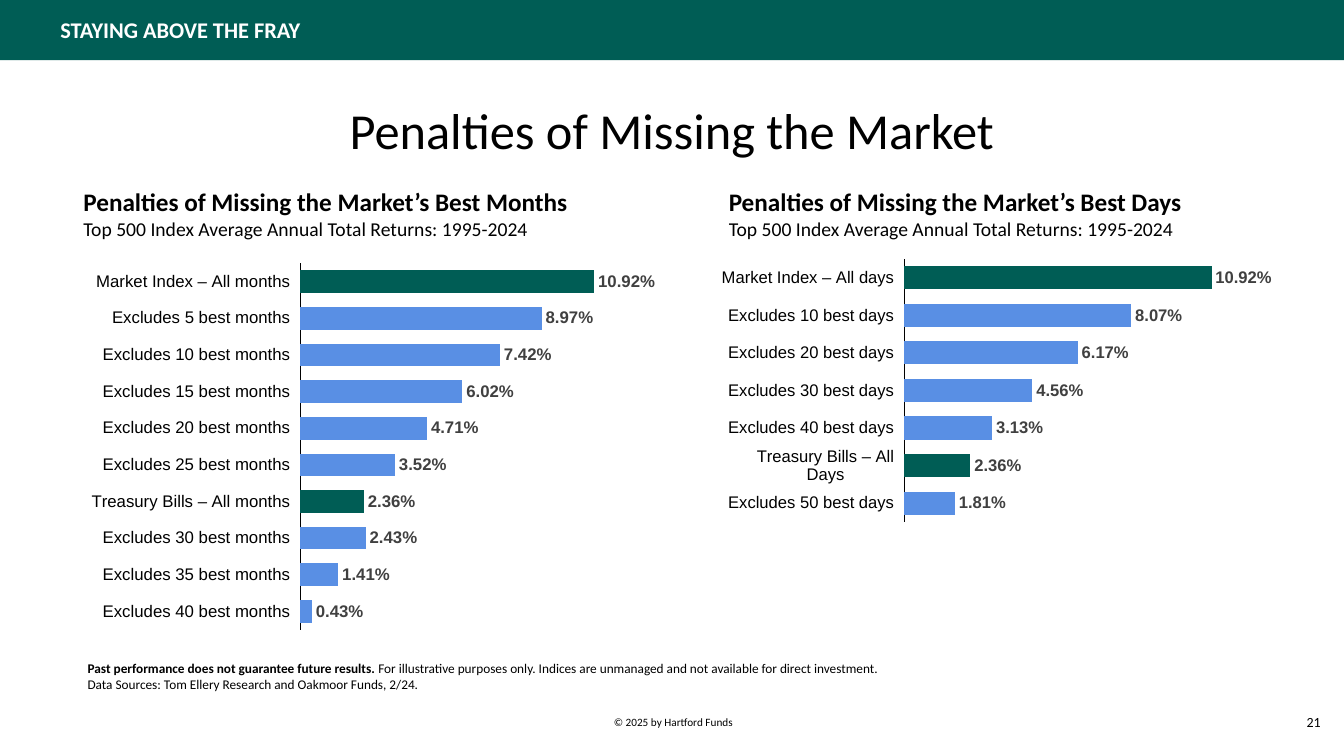
"""Build the slide on the returns lost by missing the market's best months and days."""
import lxml.etree
import pptx
import pptx.chart.data
import pptx.dml.color
import pptx.enum.chart
import pptx.enum.shapes
import pptx.enum.text
import pptx.oxml.ns
import pptx.util

Pt = pptx.util.Pt
ALIGN = pptx.enum.text.PP_ALIGN
ANCHOR = pptx.enum.text.MSO_ANCHOR
AUTO_SIZE = pptx.enum.text.MSO_AUTO_SIZE

COLORS = {
    "green": "005D55",
    "blue": "598FE4",
    "black": "000000",
    "white": "FFFFFF",
    "label": "404040",
}

MONTH_RETURNS = {
    "Excludes 40 best months": 0.0043,
    "Excludes 35 best months": 0.0141,
    "Excludes 30 best months": 0.0243,
    "Treasury Bills – All months": 0.0236,
    "Excludes 25 best months": 0.0352,
    "Excludes 20 best months": 0.0471,
    "Excludes 15 best months": 0.0602,
    "Excludes 10 best months": 0.0742,
    "Excludes 5 best months": 0.0897,
    "Market Index – All months": 0.1092,
}
DAY_RETURNS = {
    "Excludes 50 best days": 0.0181,
    "Treasury Bills – All Days": 0.0236,
    "Excludes 40 best days": 0.0313,
    "Excludes 30 best days": 0.0456,
    "Excludes 20 best days": 0.0617,
    "Excludes 10 best days": 0.0807,
    "Market Index – All days": 0.1092,
}


def rgb(name):
    """Return the named colour."""
    return pptx.dml.color.RGBColor.from_string(COLORS[name])


def style_font(font, size, name="Calibri", color="black", bold=False):
    """Set the typeface, size, weight and colour of a font."""
    font.name = name
    font.size = Pt(size)
    font.bold = bold
    font.color.rgb = rgb(color)


def fill_paragraph(paragraph, runs, color="black", align=ALIGN.LEFT):
    """Add (text, size, bold) runs to a paragraph."""
    paragraph.alignment = align
    for text, size, bold in runs:
        run = paragraph.add_run()
        run.text = text
        style_font(run.font, size, color=color, bold=bold)


def add_text(slide, box, paragraphs, color="black", align=ALIGN.LEFT,
             anchor=ANCHOR.TOP, grow=False):
    """Add a wrapped text box and return its text frame."""
    frame = slide.shapes.add_textbox(*map(Pt, box)).text_frame
    frame.word_wrap = True
    frame.auto_size = AUTO_SIZE.SHAPE_TO_FIT_TEXT if grow else AUTO_SIZE.NONE
    frame.vertical_anchor = anchor
    for index, runs in enumerate(paragraphs):
        paragraph = frame.add_paragraph() if index else frame.paragraphs[0]
        fill_paragraph(paragraph, runs, color, align)
    return frame


def add_banner(slide):
    """Add the green band with the section name."""
    band = slide.shapes.add_shape(
        pptx.enum.shapes.MSO_SHAPE.RECTANGLE, 0, 0, Pt(960), Pt(43))
    band.shadow.inherit = False
    band.fill.solid()
    band.fill.fore_color.rgb = rgb("green")
    band.line.fill.background()
    frame = add_text(slide, (36, 12.2, 534, 22), [[("STAYING ABOVE THE FRAY", 16, True)]],
                     color="white", anchor=ANCHOR.MIDDLE, grow=True)
    frame.paragraphs[0].line_spacing = 0.75


def set_title(slide, text):
    """Place and format the title placeholder."""
    title = slide.shapes.title
    title.left, title.top, title.width, title.height = map(Pt, (66, 70.6, 828, 57))
    frame = title.text_frame
    frame.margin_left = frame.margin_right = frame.margin_top = frame.margin_bottom = 0
    frame.auto_size = AUTO_SIZE.NONE
    frame.vertical_anchor = ANCHOR.TOP
    fill_paragraph(frame.paragraphs[0], [(text, 36, False)], align=ALIGN.CENTER)


def add_heading(slide, left, period):
    """Add the heading and subheading above a chart."""
    add_text(slide, (left, 129.6, 382, 46), [
        [(f"Penalties of Missing the Market’s Best {period}", 18, True)],
        [("Top 500 Index Average Annual Total Returns: 1995-2024", 14, False)],
    ], grow=True)


def set_plot_layout(chart, layout):
    """Fix the inner plot area as fractions of the chart."""
    qn = pptx.oxml.ns.qn
    plot_area = chart.plots[0]._element.getparent()
    for existing in plot_area.findall(qn("c:layout")):
        plot_area.remove(existing)
    element = lxml.etree.Element(qn("c:layout"))
    plot_area.insert(0, element)
    manual = lxml.etree.SubElement(element, qn("c:manualLayout"))
    settings = [("layoutTarget", "inner"), ("xMode", "edge"), ("yMode", "edge")]
    settings += zip("xywh", layout)
    for tag, value in settings:
        lxml.etree.SubElement(manual, qn(f"c:{tag}")).set("val", str(value))


def add_return_chart(slide, box, returns, layout, maximum):
    """Add a bar chart of returns with the full-period bars in green."""
    enums = pptx.enum.chart
    data = pptx.chart.data.CategoryChartData(number_format="0.00%")
    data.categories = list(returns)
    data.add_series("Series 1", list(returns.values()))
    chart = slide.shapes.add_chart(
        enums.XL_CHART_TYPE.BAR_CLUSTERED, *map(Pt, box), data).chart
    chart.has_title = False
    chart.has_legend = False
    style_font(chart.font, 10, "Arial")

    category_axis = chart.category_axis
    category_axis.tick_label_position = enums.XL_TICK_LABEL_POSITION.LOW
    category_axis.major_tick_mark = enums.XL_TICK_MARK.NONE
    category_axis.format.line.color.rgb = rgb("black")
    category_axis.format.line.width = Pt(0.5)
    style_font(category_axis.tick_labels.font, 12, "Arial")

    value_axis = chart.value_axis
    value_axis.minimum_scale = 0
    value_axis.maximum_scale = maximum
    value_axis.has_major_gridlines = False
    value_axis.visible = False

    plot = chart.plots[0]
    plot.gap_width = 62
    plot.vary_by_categories = False
    plot.has_data_labels = True
    labels = plot.data_labels
    labels.show_value = True
    labels.position = enums.XL_LABEL_POSITION.OUTSIDE_END
    labels.number_format = "0.00%"
    labels.number_format_is_linked = False
    style_font(labels.font, 12, "Arial", "label", True)

    series = plot.series[0]
    series.invert_if_negative = False
    series.format.fill.solid()
    series.format.fill.fore_color.rgb = rgb("blue")
    for index, category in enumerate(returns):
        if "– All" in category:
            fill = series.points[index].format.fill
            fill.solid()
            fill.fore_color.rgb = rgb("green")
    set_plot_layout(chart, layout)


def main():
    """Build and save the slide."""
    presentation = pptx.Presentation()
    presentation.slide_width, presentation.slide_height = Pt(960), Pt(540)
    slide = presentation.slides.add_slide(presentation.slide_layouts[5])
    add_banner(slide)
    set_title(slide, "Penalties of Missing the Market")
    add_heading(slide, 52.5, "Months")
    add_heading(slide, 513.5, "Days")
    add_return_chart(slide, (56, 177, 415, 284), MONTH_RETURNS,
                     (0.382, 0.039, 0.556, 0.922), 0.12)
    add_return_chart(slide, (515.5, 173, 393, 210), DAY_RETURNS,
                     (0.327, 0.057, 0.632, 0.895), 0.122)
    add_text(slide, (55.5, 468, 670, 30), [
        [("Past performance does not guarantee future results. ", 9.5, True),
         ("For illustrative purposes only. Indices are unmanaged and not available "
          "for direct investment.", 9.5, False)],
        [("Data Sources: Tom Ellery Research and Oakmoor Funds, 2/24.", 9.5, False)],
    ], grow=True)
    add_text(slide, (90, 492, 782, 47), [[("© 2025 by Hartford Funds", 8, False)]],
             align=ALIGN.CENTER, anchor=ANCHOR.MIDDLE)
    add_text(slide, (726.5, 492.5, 224, 47), [[("21", 10, False)]],
             align=ALIGN.RIGHT, anchor=ANCHOR.MIDDLE)
    presentation.save("out.pptx")


if __name__ == "__main__":
    main()
